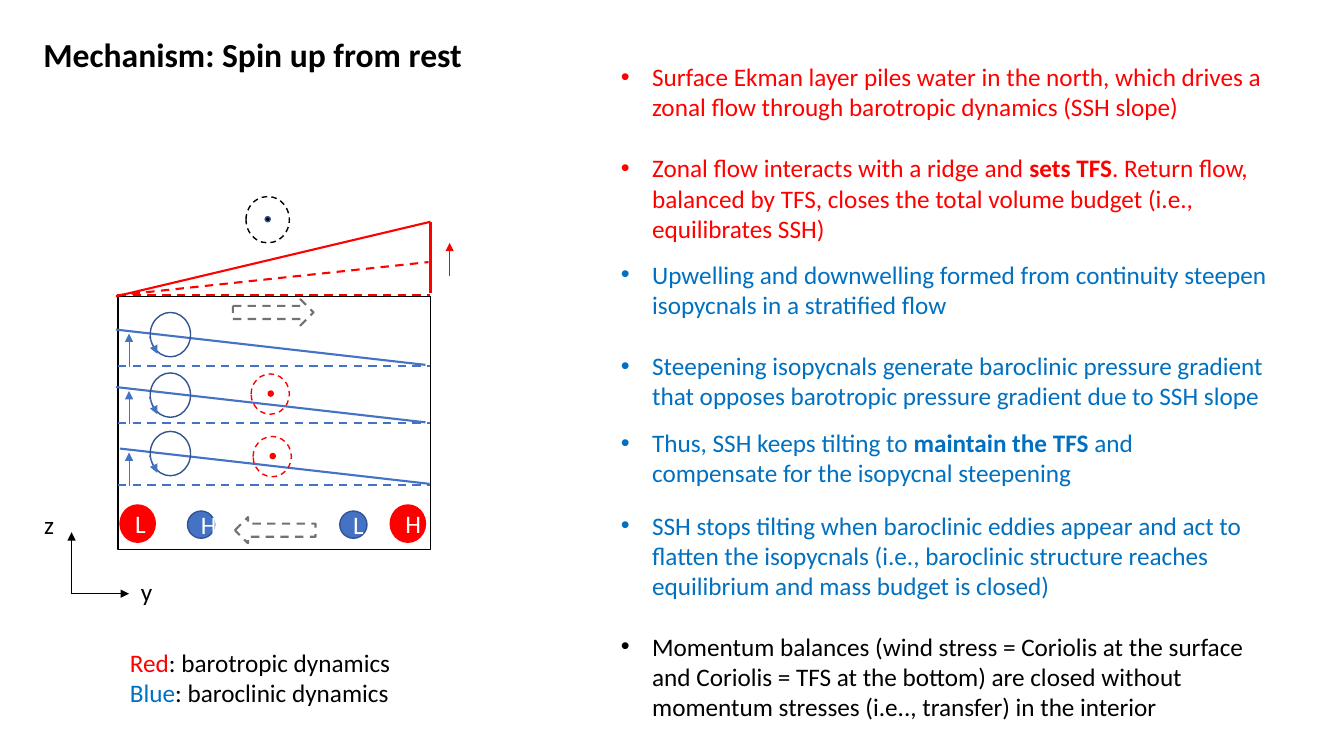
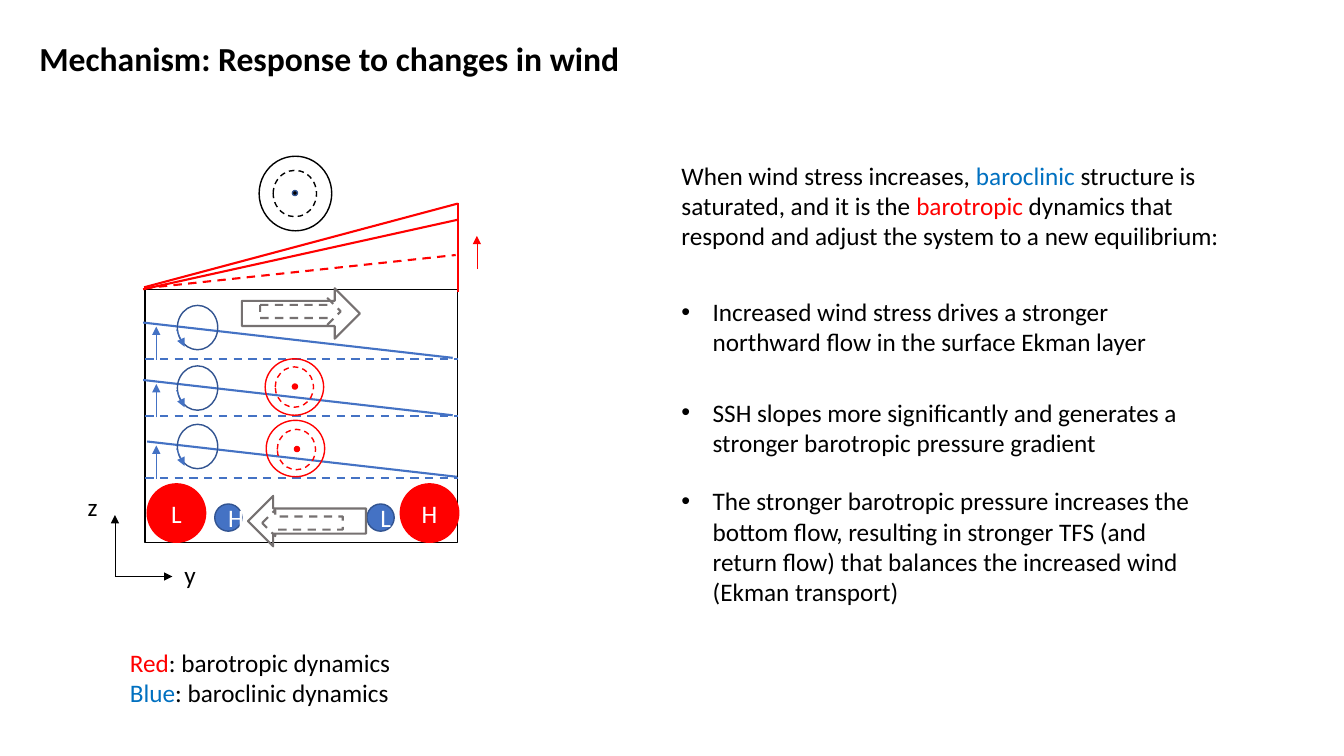
from lxml.etree import SubElement
from pptx import Presentation
from pptx.dml.color import RGBColor
from pptx.enum.dml import MSO_LINE
from pptx.enum.shapes import MSO_CONNECTOR, MSO_SHAPE
from pptx.enum.text import MSO_ANCHOR, MSO_AUTO_SIZE, PP_ALIGN
from pptx.oxml.ns import qn
from pptx.util import Emu, Pt

BLACK, WHITE, GREY = "000000", "FFFFFF", "767171"
RED, BLUE, STEEL, NAVY = "FF0000", "0070C0", "4472C4", "325491"
FONT = "Calibri"
LAYERS = [(69, 0, 16), (126, 0, 76), (187, 4, 134)]


def px(length):
    """Turn whole px, 100 to the inch, into EMU."""
    return Emu(length * 9144)


def rgb(code):
    """Turn a hex string into a colour."""
    return RGBColor.from_string(code)


class Board:
    """Hold the style, the deck and the current slide."""

    def __init__(self):
        """Start a wide deck."""
        self.deck = Presentation()
        self.deck.slide_width, self.deck.slide_height = px(1333), px(750)
        self.origin(0, 0)

    def origin(self, left, top):
        """Measure the next elements from this point."""
        self.left, self.top = left, top

    def place(self, x, y):
        """Turn a point measured from the origin into EMU."""
        return px(self.left + x), px(self.top + y)

    def page(self, title, left, top, width):
        """Add a slide and set its title."""
        self.slide = self.deck.slides.add_slide(self.deck.slide_layouts[5])
        self.origin(0, 0)
        box = self.slide.shapes.title
        box.left, box.top, box.width, box.height = px(left), px(top), px(width), px(50)
        frame = box.text_frame
        frame.text = title
        frame.auto_size = MSO_AUTO_SIZE.NONE
        frame.vertical_anchor = MSO_ANCHOR.TOP
        frame.paragraphs[0].alignment = PP_ALIGN.LEFT
        self.format(frame.paragraphs[0].runs[0], BLACK, True, 24)

    def format(self, span, colour, bold=False, size=18):
        """Set the font of a run."""
        font = span.font
        font.name, font.size, font.bold = FONT, Pt(size), bold
        font.color.rgb = rgb(colour)

    def stroke(self, line, colour, width, dashed):
        """Set the colour, width and dash of a line."""
        line.color.rgb = rgb(colour)
        line.width = Pt(width)
        if dashed:
            line.dash_style = MSO_LINE.DASH

    def shape(self, kind, frame, colour, fill=None, width=1, dashed=False, letter=""):
        """Add a preset shape, with a white letter if one is given."""
        x, y, wide, high = frame
        shape = self.slide.shapes.add_shape(kind, *self.place(x, y), px(wide), px(high))
        shape.shadow.inherit = False
        self.stroke(shape.line, colour, width, dashed)
        if fill:
            shape.fill.solid()
            shape.fill.fore_color.rgb = rgb(fill)
        else:
            shape.fill.background()
        if letter:
            para = shape.text_frame.paragraphs[0]
            para.text = letter
            para.alignment = PP_ALIGN.CENTER
            self.format(para.runs[0], WHITE)

    def ellipse(self, *frame, **style):
        """Add an ellipse."""
        self.shape(MSO_SHAPE.OVAL, frame, **style)

    def line(self, x1, y1, x2, y2, colour, width=1.5, dashed=False, head=False):
        """Add a straight line, with an arrowhead at its end if asked."""
        line = self.slide.shapes.add_connector(
            MSO_CONNECTOR.STRAIGHT, *self.place(x1, y1), *self.place(x2, y2))
        self.stroke(line.line, colour, width, dashed)
        if head:
            SubElement(line.line._get_or_add_ln(), qn("a:tailEnd"), type="triangle")
        SubElement(line._element.spPr, qn("a:effectLst"))

    def arrow(self, x1, y1, x2, y2, colour):
        """Add a thin arrow."""
        self.line(x1, y1, x2, y2, colour, 0.5, head=True)

    def flow(self, x, y, wide, high, colour, edge):
        """Add a dashed ring with a dot, a flow out of the page."""
        self.ellipse(x, y, wide, high, colour=colour, dashed=True)
        self.ellipse(x + wide // 2 - 2, y + high // 2 - 3, 5, 5, colour=edge, fill=colour)

    def text(self, x, y, wide, high, paras, bulleted=False, gap=0):
        """Add a text box; each paragraph is a list of (words, colour, bold)."""
        box = self.slide.shapes.add_textbox(*self.place(x, y), px(wide), px(high))
        frame = box.text_frame
        frame.word_wrap = True
        for index, spans in enumerate(paras):
            para = frame.add_paragraph() if index else frame.paragraphs[0]
            if index and gap:
                para.space_before = Pt(gap)
            for words, *style in spans:
                span = para.add_run()
                span.text = words
                self.format(span, *style)
            if bulleted:
                props = para._p.get_or_add_pPr()
                props.set("marL", str(px(31)))
                props.set("indent", str(-px(31)))
                SubElement(props, qn("a:buFont"), typeface="Arial")
                SubElement(props, qn("a:buChar"), char="•")

    def bullets(self, x, y, wide, high, *paras):
        """Add bulleted paragraphs one line apart."""
        self.text(x, y, wide, high, paras, bulleted=True, gap=22)

    def axes(self, left, top):
        """Add the y and z axes."""
        self.origin(left, top)
        self.arrow(0, 0, 57, 0, BLACK)
        self.arrow(0, 0, 0, -61, BLACK)
        self.text(59, -22, 49, 40, [[("y", BLACK)]])
        self.text(-37, -89, 49, 40, [[("z", BLACK)]])
        self.origin(0, 0)

    def legend(self):
        """Explain the two colours."""
        self.text(119, 637, 328, 71, [
            [("Red", RED), (": barotropic dynamics", BLACK)],
            [("Blue", BLUE), (": baroclinic dynamics", BLACK)]])

    def basin(self, left, top, drift_top, wind_top, slope_top, ring_left):
        """Add the stratified basin and leave the origin at its corner."""
        self.origin(left, top)
        self.shape(MSO_SHAPE.RECTANGLE, (0, 0, 310, 251), BLACK)
        for depth, shift, swirl in LAYERS:
            self.line(0, depth, 310, depth, STEEL, dashed=True)
            self.line(shift - 2, depth - 36, shift + 305, depth - 1, STEEL)
            self.arrow(11, depth + 1, 11, depth - 32, STEEL)
            self.ellipse(32, swirl, 40, 44, colour=NAVY)
            self.arrow(31, swirl + 24, 39, swirl + 41, STEEL)
        self.shape(MSO_SHAPE.RIGHT_ARROW, (114, drift_top, 80, 26), GREY, width=1.5, dashed=True)
        self.shape(MSO_SHAPE.LEFT_ARROW, (116, 219, 80, 26), GREY, width=1.5, dashed=True)
        for x, letter in [(69, "H"), (220, "L")]:
            self.ellipse(x, 213, 27, 27, colour=NAVY, fill=STEEL, letter=letter)
        self.line(-1, -1, 308, -34, RED, dashed=True)
        self.line(-2, 0, 310, slope_top, RED)
        self.arrow(329, -20, 329, -53, RED)
        self.flow(127, wind_top, 43, 46, BLACK, NAVY)
        for shift, y in [(0, 77), (2, 139)]:
            self.flow(ring_left + shift, y, 38, 40, RED, RED)

    def pressure(self, low_left, high_left, top, wide, high):
        """Add the red low and high at the bottom of the basin."""
        for x, letter in [(low_left, "L"), (high_left, "H")]:
            self.ellipse(x, top, wide, high, colour=RED, fill=RED, letter=letter)


def spin_up(board):
    """Build the slide on spin up from rest."""
    board.page("Mechanism: Spin up from rest", 33, 29, 711)
    board.basin(117, 294, drift_top=3, wind_top=-99, slope_top=-74, ring_left=132)
    board.line(310, -74, 310, -3, RED)
    board.line(0, -1, 310, -1, RED, dashed=True)
    board.pressure(2, 270, 207, 35, 37)
    board.axes(71, 589)
    board.legend()
    board.bullets(
        606, 56, 666, 192,
        [("Surface Ekman layer piles water in the north, which drives a zonal flow "
          "through barotropic dynamics (SSH slope)", RED)],
        [("Zonal flow interacts with a ridge and ", RED), ("sets TFS", RED, True),
         (". Return flow, balanced by TFS, closes the total volume budget "
          "(i.e., equilibrates SSH)", RED)])
    board.bullets(
        606, 252, 692, 162,
        [("Upwelling and downwelling formed from continuity steepen isopycnals "
          "in a stratified flow", BLUE)],
        [("Steepening isopycnals generate baroclinic pressure gradient that opposes "
          "barotropic pressure gradient due to SSH slope", BLUE)])
    board.bullets(
        606, 419, 644, 71,
        [("Thus, SSH keeps tilting to ", BLUE), ("maintain the TFS ", BLUE, True),
         ("and compensate for the isopycnal steepening", BLUE)])
    board.bullets(
        606, 501, 644, 101,
        [("SSH stops tilting when baroclinic eddies appear and act to flatten the isopycnals "
          "(i.e., baroclinic structure reaches equilibrium and mass budget is closed)", BLUE)])
    board.bullets(
        606, 621, 652, 101,
        [("Momentum balances (wind stress = Coriolis at the surface and Coriolis = TFS at the "
          "bottom) are closed without momentum stresses (i.e.., transfer) in the interior",
          BLACK)])


def wind_response(board):
    """Build the slide on the response to changes in wind."""
    board.page("Mechanism: Response to changes in wind", 29, 33, 767)
    board.basin(144, 287, drift_top=9, wind_top=-118, slope_top=-69, ring_left=129)
    board.ellipse(113, -132, 72, 74, colour=BLACK)
    board.line(-1, -2, 310, -85, RED)
    board.line(310, -86, 310, 3, RED)
    board.shape(MSO_SHAPE.RIGHT_ARROW, (96, -1, 117, 50), GREY, width=1.5)
    board.shape(MSO_SHAPE.LEFT_ARROW, (102, 205, 117, 50), GREY, width=1.5)
    board.pressure(2, 253, 193, 58, 58)
    for x, y in [(119, 69), (120, 130)]:
        board.ellipse(x, y, 58, 56, colour=RED)
    board.axes(114, 572)
    board.legend()
    board.text(666, 154, 591, 101, [[
        ("When wind stress increases, ", BLACK), ("baroclinic", BLUE),
        (" structure is saturated, and it is the ", BLACK), ("barotropic", RED),
        (" dynamics that respond and adjust the system to a new equilibrium:", BLACK)]])
    for top, wide, high, words in [
            (289, 512, 71, "Increased wind stress drives a stronger northward flow "
                           "in the surface Ekman layer"),
            (389, 528, 71, "SSH slopes more significantly and generates a stronger "
                           "barotropic pressure gradient"),
            (477, 528, 131, "The stronger barotropic pressure increases the bottom flow, "
                            "resulting in stronger TFS (and return flow) that balances "
                            "the increased wind (Ekman transport)")]:
        board.bullets(666, top, wide, high, [(words, BLACK)])


def main():
    """Build and save the deck."""
    board = Board()
    spin_up(board)
    wind_response(board)
    board.deck.save("out.pptx")


if __name__ == "__main__":
    main()
